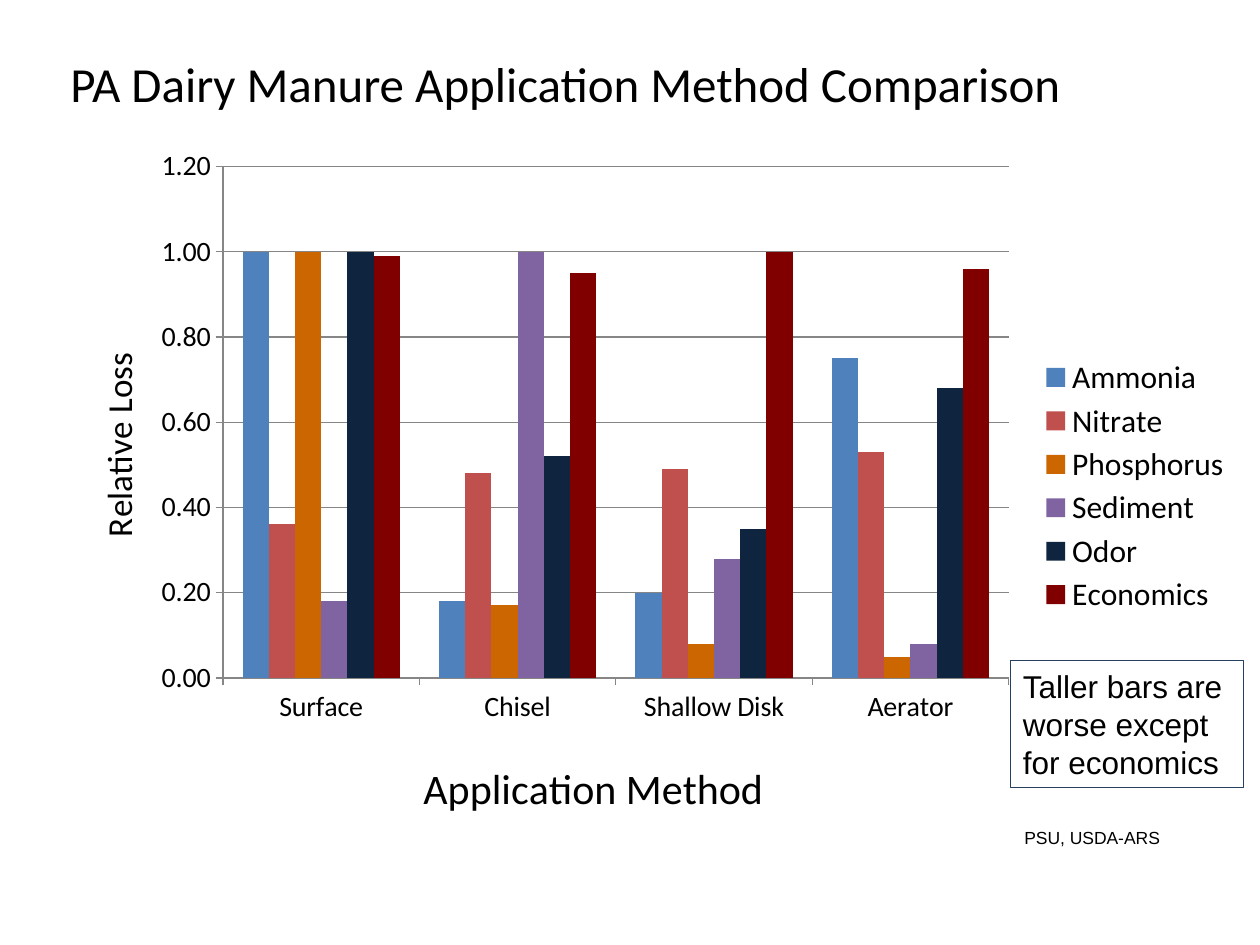
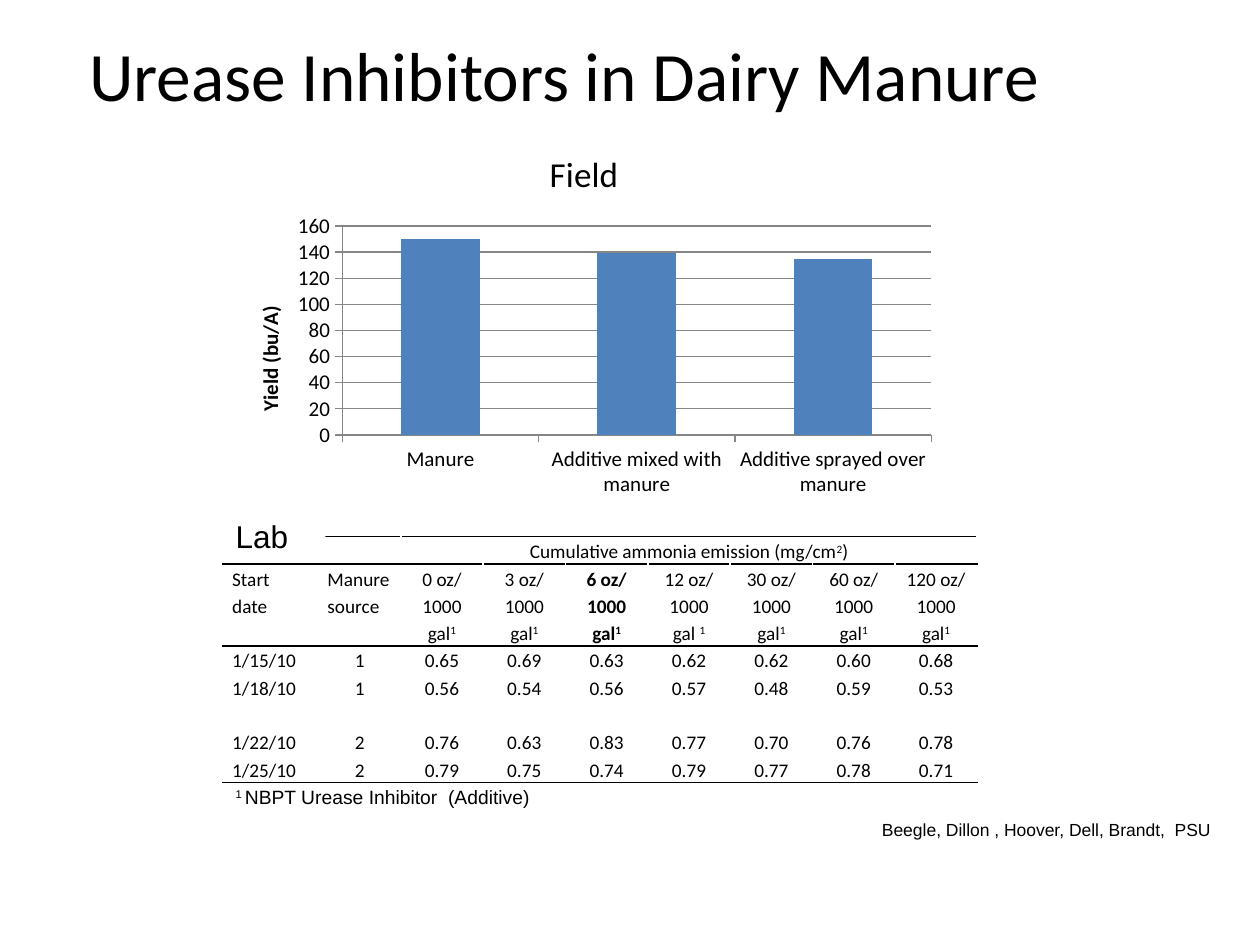
from lxml import etree
from pptx import Presentation
from pptx.chart.data import CategoryChartData
from pptx.dml.color import RGBColor
from pptx.enum.chart import XL_CHART_TYPE, XL_LEGEND_POSITION, XL_TICK_MARK
from pptx.enum.shapes import MSO_SHAPE
from pptx.enum.text import MSO_ANCHOR, PP_ALIGN
from pptx.oxml.ns import qn
from pptx.util import Cm, Pt

# Shared colours and fonts
BLACK = RGBColor(0x00, 0x00, 0x00)
WHITE = RGBColor(0xFF, 0xFF, 0xFF)
NAVY = RGBColor(0x25, 0x40, 0x61)
GRAY = RGBColor(0x86, 0x86, 0x86)
BLUE = RGBColor(0x4F, 0x81, 0xBD)
RED = RGBColor(0xC0, 0x50, 0x4D)
ORANGE = RGBColor(0xCC, 0x66, 0x00)
PURPLE = RGBColor(0x80, 0x64, 0xA2)
MIDNIGHT = RGBColor(0x0F, 0x24, 0x3E)
MAROON = RGBColor(0x80, 0x00, 0x00)
HEADING_FONT = "Calibri"
NOTE_FONT = "Arial"

TITLE_FRAME = {"margin_left": 0, "margin_right": 0, "word_wrap": True,
               "vertical_anchor": MSO_ANCHOR.MIDDLE}
CELL_FORMAT = {"margin_left": Cm(0.18), "margin_right": Cm(0.18),
               "margin_top": 0, "margin_bottom": 0}

# Slide content
LOSS_METHODS = ["Surface", "Chisel", "Shallow Disk", "Aerator"]
LOSS_SERIES = [
    ("Ammonia", (1, 0.18, 0.2, 0.75), BLUE),
    ("Nitrate", (0.36, 0.48, 0.49, 0.53), RED),
    ("Phosphorus", (1, 0.17, 0.08, 0.05), ORANGE),
    ("Sediment", (0.18, 1, 0.28, 0.08), PURPLE),
    ("Odor", (1, 0.52, 0.35, 0.68), MIDNIGHT),
    ("Economics", (0.99, 0.95, 1, 0.96), MAROON),
]
YIELD_TREATMENTS = ["Manure", "Additive mixed with manure",
                    "Additive sprayed over manure"]
YIELD_SERIES = [("Series 1", (150, 139, 135), BLUE)]

# Text between carets is superscript
EMISSION_ROWS = [
    ["", "", "Cumulative ammonia emission (mg/cm^2^)"],
    ["Start\ndate", "Manure\nsource", "0 oz/\n1000 gal^1", "3 oz/\n1000 gal^1",
     "6 oz/\n1000 gal^1", "12 oz/\n1000 gal ^1", "30 oz/\n1000 gal^1",
     "60 oz/\n1000 gal^1", "120 oz/\n1000 gal^1"],
    "1/15/10 1 0.65 0.69 0.63 0.62 0.62 0.60 0.68".split(),
    "1/18/10 1 0.56 0.54 0.56 0.57 0.48 0.59 0.53".split(),
    [],
    "1/22/10 2 0.76 0.63 0.83 0.77 0.70 0.76 0.78".split(),
    "1/25/10 2 0.79 0.75 0.74 0.79 0.77 0.78 0.71".split(),
]
COLUMN_COUNT = 9
HEADER_ROW = 1
BOLD_COLUMN = 4
RULED_TOPS = {0, 1, 2}
RULED_BOTTOMS = {0, 1, 6}


def apply_format(target, values):
    for name, value in values.items():
        setattr(target, name, value)


def format_font(font, size, name=HEADING_FONT, bold=False):
    apply_format(font, {"size": Pt(size), "name": name, "bold": bold})
    font.color.rgb = BLACK


def write_paragraph(paragraph, text, size, name, bold=False):
    """Write text into a paragraph, raising the parts between carets."""
    for position, part in enumerate(text.split("^")):
        if part:
            run = paragraph.add_run()
            run.text = part
            format_font(run.font, size, name, bold)
            if position % 2:
                run.font._element.set("baseline", "30000")


def add_title(slide, text, left, top, size):
    title = slide.shapes.title
    apply_format(title, {"left": Cm(left), "top": Cm(top),
                         "width": Cm(22.63), "height": Cm(2.03)})
    apply_format(title.text_frame, TITLE_FRAME)
    paragraph = title.text_frame.paragraphs[0]
    paragraph.alignment = PP_ALIGN.LEFT
    write_paragraph(paragraph, text, size, HEADING_FONT)


def add_note(slide, text, box, size):
    note = slide.shapes.add_textbox(*map(Cm, box))
    note.text_frame.word_wrap = True
    write_paragraph(note.text_frame.paragraphs[0], text, size, NOTE_FONT)


def add_label_box(slide, text, box, fill=None, line=None):
    shape = slide.shapes.add_shape(MSO_SHAPE.RECTANGLE, *map(Cm, box))
    shape.shadow.inherit = False
    if fill is None:
        shape.fill.background()
    else:
        shape.fill.solid()
        shape.fill.fore_color.rgb = fill
    if line is None:
        shape.line.fill.background()
    else:
        shape.line.color.rgb = line
        shape.line.width = Pt(0.75)
    shape.text_frame.word_wrap = True
    paragraph = shape.text_frame.paragraphs[0]
    paragraph.alignment = PP_ALIGN.LEFT
    write_paragraph(paragraph, text, 18, NOTE_FONT)


# Charts
def place_chart_part(element, index, **fractions):
    """Give a chart part a fixed place, as fractions of the chart."""
    for old_layout in element.findall(qn("c:layout")):
        element.remove(old_layout)
    layout = etree.Element(qn("c:layout"))
    manual = etree.SubElement(layout, qn("c:manualLayout"))
    settings = {"xMode": "edge", "yMode": "edge", **fractions}
    if element.tag == qn("c:plotArea"):
        settings = {"layoutTarget": "inner", **settings}
    for name, value in settings.items():
        etree.SubElement(manual, qn(f"c:{name}")).set("val", str(value))
    element.insert(index, layout)


def clear_chart_background(chart):
    properties = etree.Element(qn("c:spPr"))
    etree.SubElement(properties, qn("a:noFill"))
    border = etree.SubElement(properties, qn("a:ln"))
    etree.SubElement(border, qn("a:noFill"))
    chart._chartSpace.find(qn("c:chart")).addnext(properties)


def add_axis_title(axis, text, size, x, y, bold=False, upright=False):
    frame = axis.axis_title.text_frame
    write_paragraph(frame.paragraphs[0], text, size, HEADING_FONT, bold)
    if upright:
        frame._txBody.bodyPr.set("rot", "-5400000")
        frame._txBody.bodyPr.set("vert", "horz")
    place_chart_part(axis.axis_title._element, 1, x=x, y=y)


def add_column_chart(slide, box, categories, series_rows, size, scale,
                     number_format, plot):
    data = CategoryChartData()
    data.categories = categories
    for name, values, _ in series_rows:
        data.add_series(name, values)
    chart = slide.shapes.add_chart(
        XL_CHART_TYPE.COLUMN_CLUSTERED, *map(Cm, box), data).chart
    chart.has_legend = False
    chart.has_title = False
    format_font(chart.font, size)
    clear_chart_background(chart)
    apply_format(chart.plots[0], {"gap_width": 150, "overlap": 0,
                                  "vary_by_categories": False})
    for series, (_, _, color) in zip(chart.plots[0].series, series_rows):
        series.format.fill.solid()
        series.format.fill.fore_color.rgb = color
    maximum, step = scale
    apply_format(chart.value_axis, {
        "minimum_scale": 0, "maximum_scale": maximum, "major_unit": step,
        "has_major_gridlines": True})
    apply_format(chart.value_axis.tick_labels, {
        "number_format": number_format, "number_format_is_linked": False})
    for axis in (chart.category_axis, chart.value_axis):
        axis.major_tick_mark = XL_TICK_MARK.OUTSIDE
        format_font(axis.tick_labels.font, size)
    for part in (chart.category_axis, chart.value_axis,
                 chart.value_axis.major_gridlines):
        part.format.line.color.rgb = GRAY
        part.format.line.width = Pt(0.75)
    plot_area = chart._chartSpace.find(f".//{qn('c:plotArea')}")
    place_chart_part(plot_area, 0, **plot)
    return chart


def add_legend(chart, size, **place):
    chart.has_legend = True
    chart.legend.position = XL_LEGEND_POSITION.RIGHT
    chart.legend.include_in_layout = False
    format_font(chart.legend.font, size)
    place_chart_part(chart.legend._element, 1, **place)


# Table
def add_border(cell, side):
    line = etree.Element(qn(f"a:{side}"), w=str(Pt(1)))
    fill = etree.SubElement(line, qn("a:solidFill"))
    etree.SubElement(fill, qn("a:srgbClr"), val=str(BLACK))
    cell._tc.get_or_add_tcPr().insert(0, line)


def fill_cell(cell, text, centered, bold):
    apply_format(cell, CELL_FORMAT)
    cell.fill.background()
    frame = cell.text_frame
    for number, line in enumerate(text.split("\n")):
        paragraph = frame.add_paragraph() if number else frame.paragraphs[0]
        paragraph.line_spacing = 1.15
        paragraph.alignment = PP_ALIGN.CENTER if centered else PP_ALIGN.LEFT
        write_paragraph(paragraph, line, 11, HEADING_FONT, bold)
        if not line:
            etree.SubElement(paragraph._p, qn("a:endParaRPr"), sz="1100")


def add_emission_table(slide):
    table = slide.shapes.add_table(
        len(EMISSION_ROWS), COLUMN_COUNT,
        Cm(4.5), Cm(10.82), Cm(15.2), Cm(4.95)).table
    table.first_row = False
    table.horz_banding = False
    for index, column in enumerate(table.columns):
        column.width = Cm(1.66 if index else 1.92)
    for row_index, texts in enumerate(EMISSION_ROWS):
        is_header = row_index == HEADER_ROW
        table.rows[row_index].height = Cm(1.65 if is_header else 0.55)
        for column_index in range(COLUMN_COUNT):
            cell = table.cell(row_index, column_index)
            text = texts[column_index] if column_index < len(texts) else ""
            centered = column_index > (1 if is_header else 0)
            fill_cell(cell, text, centered,
                      is_header and column_index == BOLD_COLUMN)
            if row_index in RULED_BOTTOMS:
                add_border(cell, "lnB")
            if row_index in RULED_TOPS:
                add_border(cell, "lnT")
    table.cell(0, 2).merge(table.cell(0, COLUMN_COUNT - 1))


# Slides
def build_method_slide(slide):
    add_title(slide, "PA Dairy Manure Application Method Comparison",
              1.42, 0.66, 28)
    add_label_box(slide, "Taller bars are worse except for economics",
                  (20.37, 13.31, 4.7, 2.57), line=NAVY)
    chart = add_column_chart(
        slide, (1.04, 2.74, 24, 14.12), LOSS_METHODS, LOSS_SERIES, 16,
        (1.2, 0.2), "0.00", {"x": 0.144, "y": 0.044, "w": 0.66, "h": 0.73})
    add_axis_title(chart.category_axis, "Application Method", 24, 0.306, 0.88)
    add_axis_title(chart.value_axis, "Relative Loss", 20, 0.03, 0.3,
                   upright=True)
    add_legend(chart, 18, x=0.825, y=0.31, w=0.17, h=0.38)
    add_note(slide, "PSU, USDA-ARS", (20.4, 16.54, 4.11, 0.69), 10)


def build_inhibitor_slide(slide):
    add_title(slide, "Urease Inhibitors in Dairy Manure", 1.8, 0.48, 39.6)
    add_emission_table(slide)
    add_label_box(slide, "Lab", (4.5, 10.29, 2.06, 1.02), fill=WHITE)
    add_note(slide, "^1 ^NBPT Urease Inhibitor  (Additive)",
             (4.5, 15.7, 6.55, 0.74), 11)
    chart = add_column_chart(
        slide, (4.5, 2.59, 14.55, 7.62), YIELD_TREATMENTS, YIELD_SERIES, 12,
        (160, 20), "General", {"x": 0.165, "y": 0.258, "w": 0.816, "h": 0.553})
    chart.has_title = True
    write_paragraph(chart.chart_title.text_frame.paragraphs[0], "Field", 20,
                    HEADING_FONT)
    add_axis_title(chart.value_axis, "Yield (bu/A)", 12, 0.04, 0.46,
                   bold=True, upright=True)
    add_note(slide, "Beegle, Dillon , Hoover, Dell, Brandt,  PSU",
             (17.53, 16.38, 7.59, 0.69), 10)


def main():
    presentation = Presentation()
    presentation.slide_width = Cm(25.4)
    presentation.slide_height = Cm(19.05)
    title_only = presentation.slide_layouts[5]
    for build_slide in (build_method_slide, build_inhibitor_slide):
        build_slide(presentation.slides.add_slide(title_only))
    presentation.save("out.pptx")


if __name__ == "__main__":
    main()
